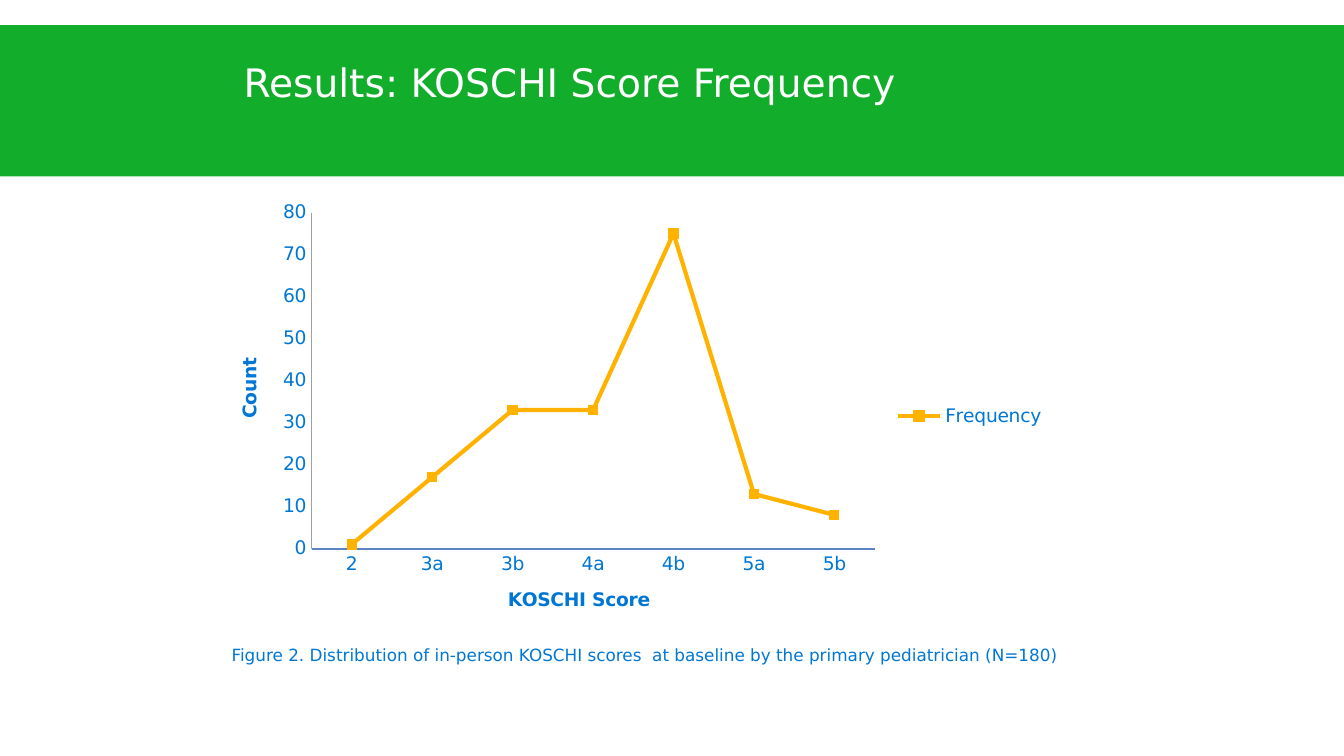
from pptx import Presentation
from pptx.chart.data import CategoryChartData
from pptx.dml.color import RGBColor
from pptx.enum import chart as ch, shapes, text
from pptx.util import Inches, Pt

FONT = "DejaVu Sans"
GREEN, BLUE, AMBER, WHITE = "12AD2A", "0077D4", "FFB300", "FFFFFF"
GRAY, AXIS_BLUE = "A0A0A0", "5B84C4"

TITLE = "Results: KOSCHI Score Frequency"
CAPTION = ("Figure 2. Distribution of in-person KOSCHI scores  at baseline "
           "by the primary pediatrician (N=180)")
SERIES = "Frequency"
COUNTS = {"2": 1, "3a": 17, "3b": 33, "4a": 33, "4b": 75, "5a": 13, "5b": 8}

# The layout grid is 160 by 90 steps of a sixteenth of an inch.
SLIDE_SIZE = (160, 90)
BAND_BOX = (0, 3, 160, 18)
TITLE_BOX = (29, 7, 102, 15)
CHART_BOX = (25, 23, 101, 53)
CAPTION_BOX = (26, 76, 107, 4)


def grid(steps):
    return [Inches(step / 16) for step in steps]


def color(hex_code):
    return RGBColor.from_string(hex_code)


def set_font(font, size, hex_code, bold=False):
    font.name, font.size, font.bold = FONT, Pt(size), bold
    font.color.rgb = color(hex_code)


def write(frame, words, size, hex_code, bold=False, margin=None):
    frame.text = words
    paragraph = frame.paragraphs[0]
    set_font(paragraph.runs[0].font, size, hex_code, bold)
    if margin is not None:
        frame.margin_left = frame.margin_right = Inches(margin)
        frame.margin_top = frame.margin_bottom = Inches(margin)
    return paragraph


def style_axis(axis, name, line_color, line_width):
    axis.has_major_gridlines = False
    axis.major_tick_mark = axis.minor_tick_mark = ch.XL_TICK_MARK.NONE
    axis.format.line.color.rgb = color(line_color)
    axis.format.line.width = Pt(line_width)
    set_font(axis.tick_labels.font, 10, BLUE)
    write(axis.axis_title.text_frame, name, 10, BLUE, bold=True)


def add_score_chart(slide):
    data = CategoryChartData()
    data.categories = list(COUNTS)
    data.add_series(SERIES, list(COUNTS.values()))
    chart = slide.shapes.add_chart(
        ch.XL_CHART_TYPE.LINE_MARKERS, *grid(CHART_BOX), data).chart
    set_font(chart.font, 10, BLUE)
    chart.has_title = False
    chart.has_legend = True
    chart.legend.position = ch.XL_LEGEND_POSITION.RIGHT
    chart.legend.include_in_layout = False
    set_font(chart.legend.font, 10, BLUE)
    style_axis(chart.category_axis, "KOSCHI Score", AXIS_BLUE, 1)
    style_axis(chart.value_axis, "Count", GRAY, 0.5)

    chart.plots[0].vary_by_categories = False
    frequency = chart.plots[0].series[0]
    frequency.smooth = False
    frequency.format.line.color.rgb = color(AMBER)
    frequency.format.line.width = Pt(2.25)
    marker = frequency.marker
    marker.style, marker.size = ch.XL_MARKER_STYLE.SQUARE, 5
    marker.format.fill.solid()
    marker.format.fill.fore_color.rgb = color(AMBER)
    marker.format.line.color.rgb = color(AMBER)


def main():
    prs = Presentation()
    prs.slide_width, prs.slide_height = grid(SLIDE_SIZE)
    slide = prs.slides.add_slide(prs.slide_layouts[5])

    title = slide.shapes.title
    band = slide.shapes.add_shape(shapes.MSO_SHAPE.RECTANGLE, *grid(BAND_BOX))
    band.shadow.inherit = False
    band.fill.solid()
    band.fill.fore_color.rgb = color(GREEN)
    band.line.fill.background()
    title.element.addprevious(band.element)

    title.left, title.top, title.width, title.height = grid(TITLE_BOX)
    heading = write(title.text_frame, TITLE, 21, WHITE, margin=0)
    heading.alignment = text.PP_ALIGN.LEFT
    title.text_frame.vertical_anchor = text.MSO_ANCHOR.TOP
    title.text_frame.auto_size = text.MSO_AUTO_SIZE.NONE

    add_score_chart(slide)

    caption = slide.shapes.add_textbox(*grid(CAPTION_BOX)).text_frame
    caption.word_wrap = True
    caption.auto_size = text.MSO_AUTO_SIZE.SHAPE_TO_FIT_TEXT
    write(caption, CAPTION, 9, BLUE)

    prs.save("out.pptx")


if __name__ == "__main__":
    main()
